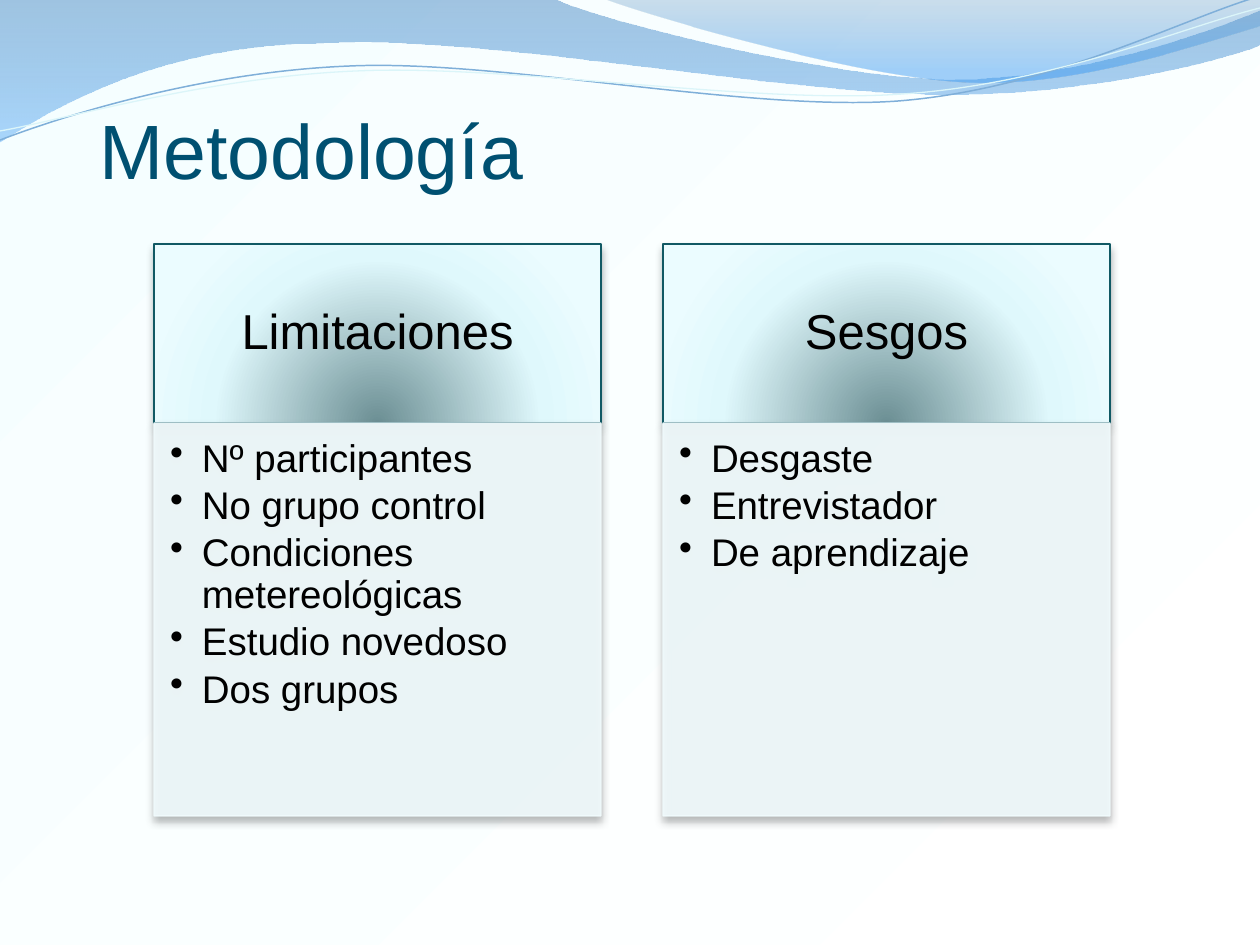
import lxml.etree
import pptx
import pptx.dml.color
import pptx.enum.shapes
import pptx.enum.text
import pptx.oxml.ns
import pptx.util

PX = 914400 // 126
FONT = "Arial"
qn = pptx.oxml.ns.qn


def rgb(code):
    return pptx.dml.color.RGBColor.from_string(code)


def add(top, tag, **attrs):
    node = lxml.etree.SubElement(top, qn(tag))
    for key, val in attrs.items():
        node.set(key, str(val))
    return node


def tint(top, code, alpha):
    color = add(top, "a:srgbClr", val=code)
    add(color, "a:alpha", val=alpha * 1000)


class Deck:
    def __init__(self, wide, high):
        self.prs = pptx.Presentation()
        self.prs.slide_width = wide * PX
        self.prs.slide_height = high * PX
        self.slide = self.prs.slides.add_slide(self.prs.slide_layouts[6])
        self.shapes = self.slide.shapes

    def blend(self, fill, top, stops, angle=None, focus=None):
        """Swap a solid fill for a gradient of (place, colour, opacity) stops."""
        fill.solid()
        old = next(top.iter(qn("a:solidFill")))
        new = lxml.etree.Element(qn("a:gradFill"), rotWithShape="1")
        items = add(new, "a:gsLst")
        for place, code, alpha in stops:
            tint(add(items, "a:gs", pos=place * 1000), code, alpha)
        if focus:
            way = add(new, "a:path", path="circle")
            add(way, "a:fillToRect", **{k: v * 1000 for k, v in focus.items()})
        else:
            add(new, "a:lin", ang=angle * 60000, scaled=0)
        old.getparent().replace(old, new)

    def back(self, stops, angle):
        self.blend(self.slide.background.fill, self.slide.element, stops, angle)

    def curve(self, start, parts, close=False):
        """Each part is one point (line) or three points (cubic curve)."""
        pen = self.shapes.build_freeform(*start, scale=PX)
        pen.add_line_segments([p for part in parts for p in part], close=close)
        shape = pen.convert_to_shape()
        shape.shadow.inherit = False
        lines = iter(list(shape.element.iter(qn("a:lnTo"))))
        for part in parts:
            first = next(lines)
            if len(part) == 3:
                bend = lxml.etree.Element(qn("a:cubicBezTo"))
                first.getparent().replace(first, bend)
                bend.append(first[0])
                for _ in range(2):
                    line = next(lines)
                    bend.append(line[0])
                    line.getparent().remove(line)
        return shape

    def wave(self, start, parts, stops):
        shape = self.curve(start, parts, close=True)
        shape.line.fill.background()
        self.blend(shape.fill, shape.element.spPr, stops, 90)

    def thread(self, start, parts, code, width):
        shape = self.curve(start, parts)
        shape.fill.background()
        self.edge(shape, code, width)

    def edge(self, shape, code, width):
        shape.line.color.rgb = rgb(code)
        shape.line.width = pptx.util.Pt(width)

    def box(self, left, top, wide, high, edge, shade):
        shape = self.shapes.add_shape(
            pptx.enum.shapes.MSO_SHAPE.RECTANGLE,
            left * PX, top * PX, wide * PX, high * PX)
        self.edge(shape, edge, 0.75)
        shape.shadow.inherit = False
        drop = add(shape.element.spPr.find(qn("a:effectLst")), "a:outerShdw",
                   blurRad=pptx.util.Pt(4.5), dist=pptx.util.Pt(3),
                   dir=90 * 60000, rotWithShape=0)
        tint(drop, shade, 48)
        return shape

    def frame(self, shape, pads, anchor):
        frame = shape.text_frame
        frame.word_wrap = True
        frame.vertical_anchor = anchor
        (frame.margin_left, frame.margin_top,
         frame.margin_right, frame.margin_bottom) = [p * PX for p in pads]
        return frame

    def put(self, para, text, size, code="000000"):
        run = para.add_run()
        run.text = text
        run.font.name = FONT
        run.font.size = pptx.util.Pt(size)
        run.font.color.rgb = rgb(code)

    def title(self, left, top, wide, high, text):
        box = self.shapes.add_textbox(left * PX, top * PX, wide * PX, high * PX)
        frame = box.text_frame
        frame.word_wrap = False
        frame.auto_size = pptx.enum.text.MSO_AUTO_SIZE.SHAPE_TO_FIT_TEXT
        self.put(frame.paragraphs[0], text, 44, "005071")

    def head(self, left, top, wide, high, text):
        shape = self.box(left, top, wide, high, "115964", "4D5658")
        self.blend(shape.fill, shape.element.spPr,
                   [(0, "6C8F94", 100), (68, "DFF8FC", 100), (100, "EBFCFF", 100)],
                   focus={"l": 50, "t": 130, "r": 50, "b": -30})
        frame = self.frame(shape, (28, 15, 28, 15), pptx.enum.text.MSO_ANCHOR.MIDDLE)
        para = frame.paragraphs[0]
        para.alignment = pptx.enum.text.PP_ALIGN.CENTER
        para.line_spacing = 0.9
        para.space_after = pptx.util.Pt(9.8)
        self.put(para, text, 28)

    def body(self, left, top, wide, high, items):
        shape = self.box(left, top, wide, high, "F1FBFD", "555859")
        shape.fill.solid()
        shape.fill.fore_color.rgb = rgb("F1FBFD")
        for color in shape.element.spPr.iterfind(".//" + qn("a:solidFill") + "/*"):
            add(color, "a:alpha", val=90000)
        frame = self.frame(shape, (16, 16, 21, 24), pptx.enum.text.MSO_ANCHOR.TOP)
        for i, item in enumerate(items):
            para = frame.add_paragraph() if i else frame.paragraphs[0]
            para.alignment = pptx.enum.text.PP_ALIGN.LEFT
            para.line_spacing = 0.9
            para.space_after = pptx.util.Pt(3.3)
            props = para._p.get_or_add_pPr()
            props.set("marL", str(32 * PX))
            props.set("indent", str(-32 * PX))
            add(props, "a:buChar", char="•")
            self.put(para, item, 22)


def main():
    deck = Deck(1260, 945)
    deck.back([(0, "FFFFFF", 100), (100, "F5FEFF", 100)], 225)

    # Waves along the top
    deck.wave((0, -1), [
        [(554, -1)],
        [(600, 21), (837, 79), (955, 79)],
        [(1075, 79), (1207, 33), (1260, 11)],
        [(1261, 45)],
        [(1239, 55), (1096, 96), (940, 94)],
        [(784, 94), (481, 35), (324, 43)],
        [(163, 44), (58, 105), (-1, 142)],
    ], [(0, "377EBE", 45), (100, "69B5F9", 55)])
    deck.wave((604, -1), [
        [(641, 14), (859, 78), (969, 82)],
        [(1079, 87), (1211, 40), (1260, 26)],
        [(1260, 0)],
    ], [(0, "5F93C1", 30), (80, "3496F1", 45)])

    # Thin lines that follow the waves
    deck.thread((0, 140), [
        [(60, 117), (199, 72), (349, 66)],
        [(498, 59), (747, 112), (898, 101)],
        [(1050, 89), (1182, 19), (1257, -3)],
    ], "7FAFD9", 0.85)
    deck.thread((0, 131), [
        [(59, 121), (207, 77), (357, 71)],
        [(508, 64), (752, 105), (903, 94)],
        [(1053, 84), (1186, 26), (1260, 8)],
    ], "DBF5F9", 0.75)

    deck.title(87, 96, 454, 106, "Metodología")

    # Two columns: heading above its list
    cols = {
        "Limitaciones": ["Nº participantes", "No grupo control",
                         "Condiciones metereológicas", "Estudio novedoso",
                         "Dos grupos"],
        "Sesgos": ["Desgaste", "Entrevistador", "De aprendizaje"],
    }
    for i, (name, items) in enumerate(cols.items()):
        left = 154 + i * 509
        deck.head(left, 244, 447, 179, name)
        deck.body(left, 423, 447, 393, items)

    deck.prs.save("out.pptx")


if __name__ == "__main__":
    main()
